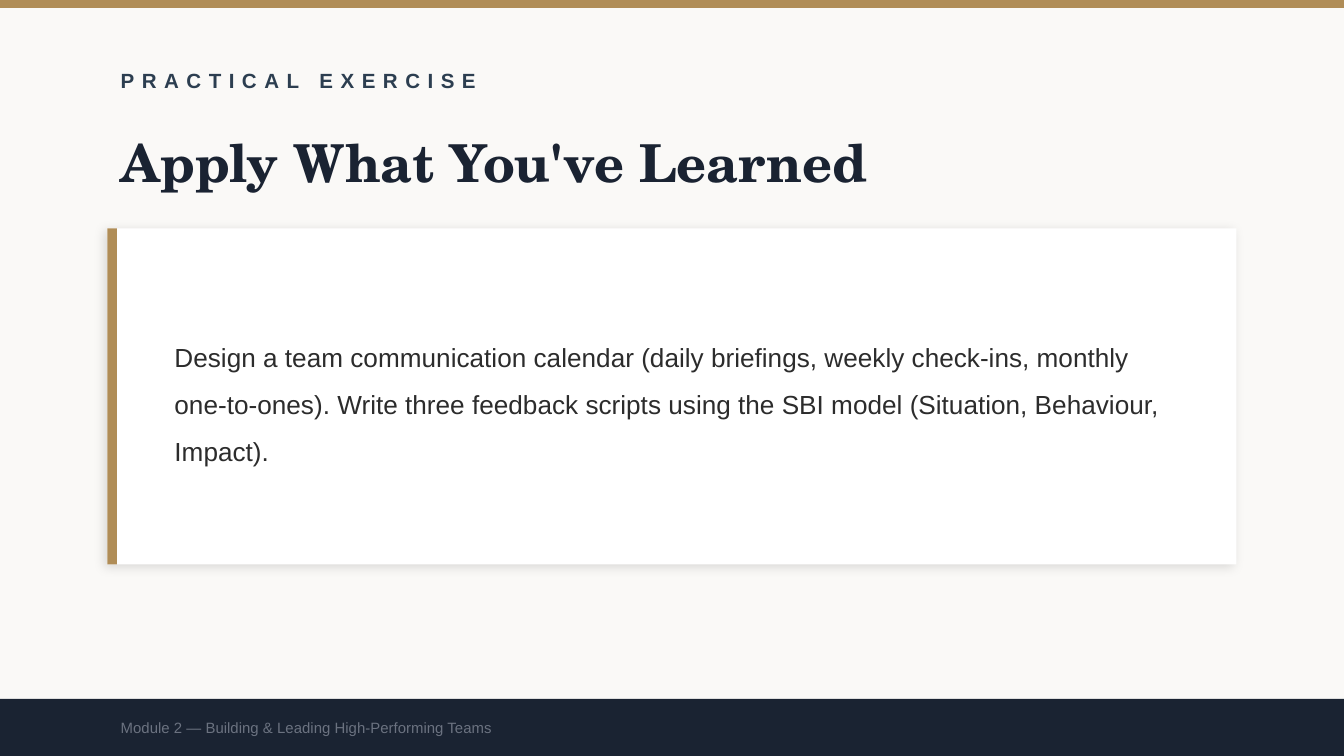
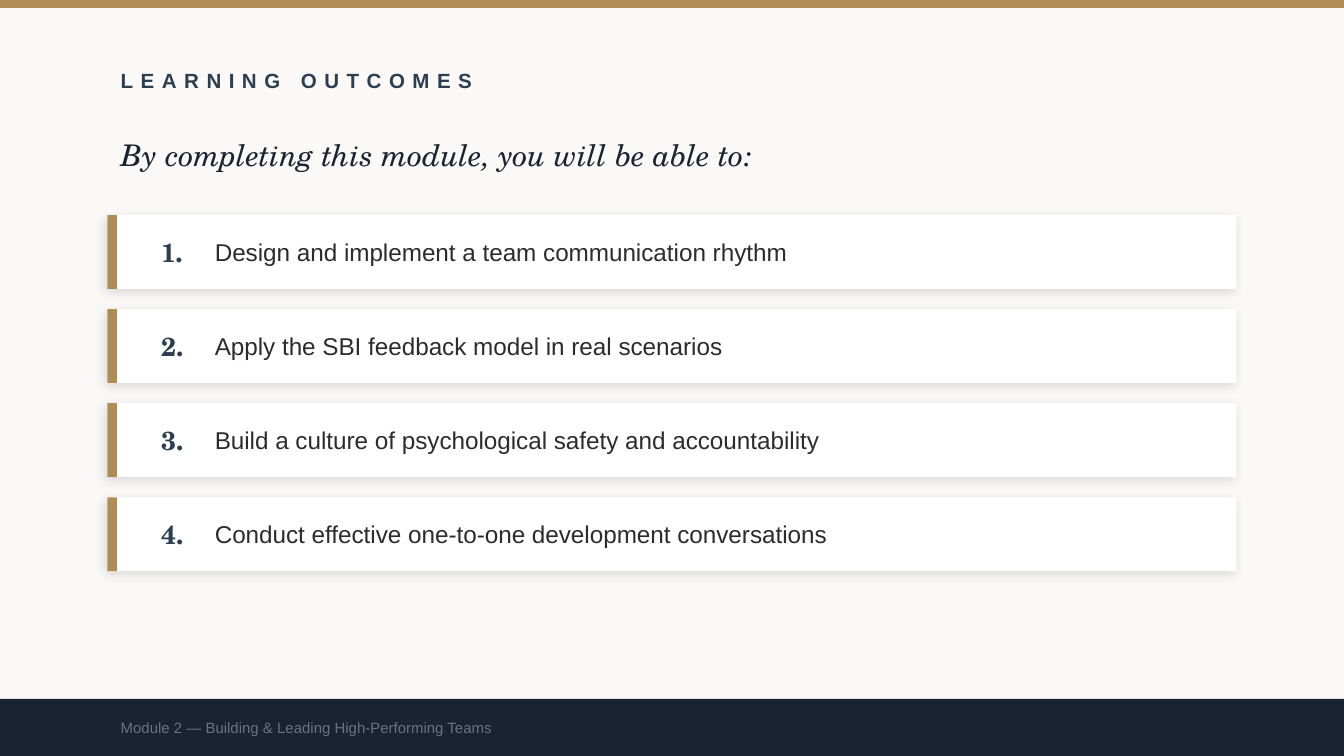
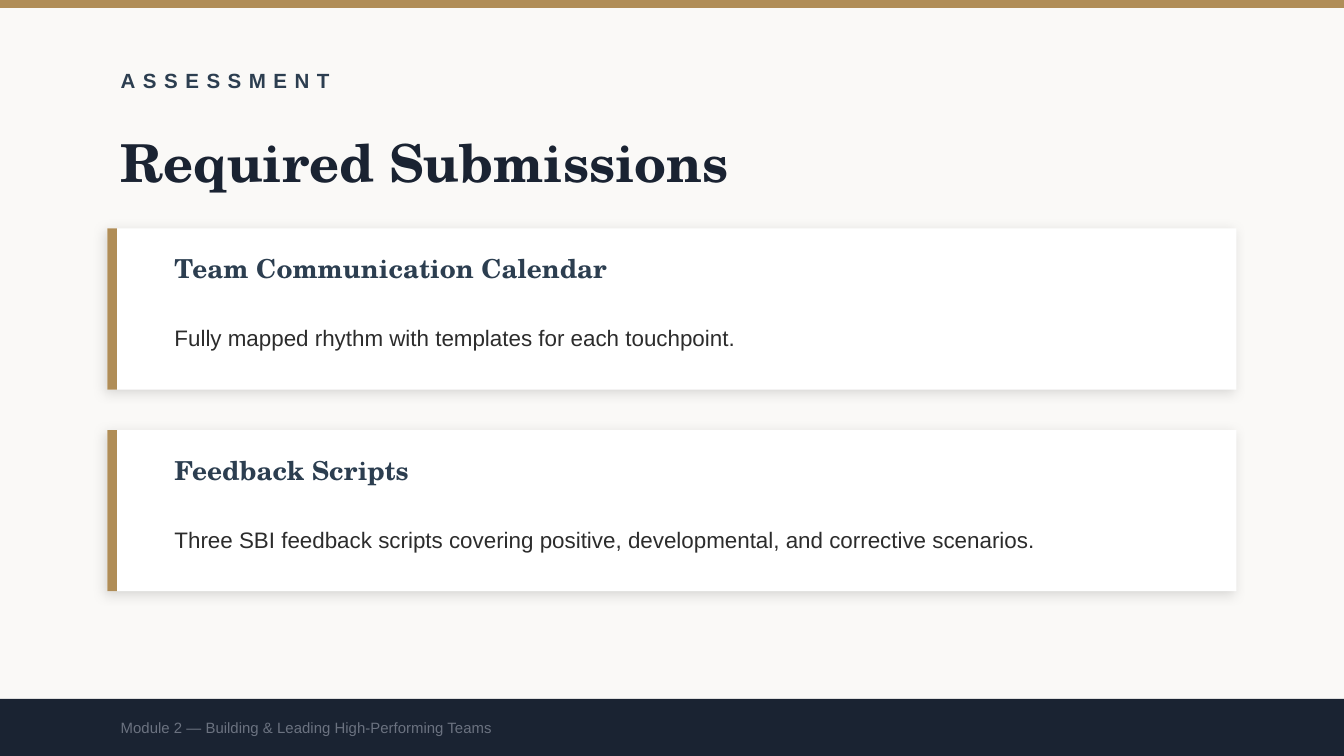
from lxml import etree
from pptx import Presentation, util as u
from pptx.dml.color import RGBColor
from pptx.enum import shapes, text
from pptx.oxml import ns

# Content
FOOTER = "Module 2 — Building & Leading High-Performing Teams"
EXERCISE = {
    "label": "PRACTICAL EXERCISE",
    "title": "Apply What You've Learned",
    "task": "Design a team communication calendar (daily briefings, weekly check-ins, "
            "monthly one-to-ones). Write three feedback scripts using the SBI model "
            "(Situation, Behaviour, Impact).",
}
OUTCOMES = {
    "label": "LEARNING OUTCOMES",
    "lead": "By completing this module, you will be able to:",
    "items": [
        "Design and implement a team communication rhythm",
        "Apply the SBI feedback model in real scenarios",
        "Build a culture of psychological safety and accountability",
        "Conduct effective one-to-one development conversations",
    ],
}
ASSESSMENT = {
    "label": "ASSESSMENT",
    "title": "Required Submissions",
    "items": [
        ("Team Communication Calendar",
         "Fully mapped rhythm with templates for each touchpoint."),
        ("Feedback Scripts",
         "Three SBI feedback scripts covering positive, developmental, "
         "and corrective scenarios."),
    ],
}

# Shared look
COLORS = {"paper": "FAF9F7", "gold": "B08D57", "navy": "1A2332", "slate": "2C3E50",
          "ink": "2C2C2C", "gray": "6B7280", "white": "FFFFFF", "shadow": "000000"}
SERIF, SANS = "TeX Gyre Schola", "Arial"
STYLES = {  # font, size, colour, bold, italic
    "label": (SANS, 11, "slate", True, False),
    "title": (SERIF, 28, "navy", True, False),
    "lead": (SERIF, 16, "navy", False, True),
    "heading": (SERIF, 14, "slate", True, False),
    "task": (SANS, 14, "ink", False, False),
    "item": (SANS, 13, "ink", False, False),
    "detail": (SANS, 12, "ink", False, False),
    "footer": (SANS, 8, "gray", False, False),
}

# Layout in inches
W, H = 10, 10 * 9 / 16
MARGIN = 0.8
CARD_W = W - 2 * MARGIN
HEAD_W = 8
BODY_X, BODY_W = 1.2, 7.7
FOOT_Y, FOOT_H = 5.2, 0.42


def rgb(name):
    return RGBColor.from_string(COLORS[name])


def add_rect(s, x, y, w, h, color):
    sp = s.shapes.add_shape(shapes.MSO_SHAPE.RECTANGLE, *map(u.Inches, (x, y, w, h)))
    sp.shadow.inherit = False
    sp.fill.solid()
    sp.fill.fore_color.rgb = rgb(color)
    sp.line.fill.background()
    return sp


def add_text(s, x, y, w, h, words, style, line_spacing=None, tracking=None):
    tf = s.shapes.add_textbox(*map(u.Inches, (x, y, w, h))).text_frame
    tf.word_wrap = True
    tf.vertical_anchor = text.MSO_ANCHOR.MIDDLE
    p = tf.paragraphs[0]
    r = p.add_run()
    r.text = words
    name, size, color, bold, italic = STYLES[style]
    font = p.font
    font.name, font.size, font.bold, font.italic = name, u.Pt(size), bold, italic
    font.color.rgb = rgb(color)
    if line_spacing:
        p.line_spacing = line_spacing
    if tracking:
        r.font._element.set("spc", str(tracking * 100))


def add_soft_shadow(sp, blur=6, distance=2, angle=135, opacity=12):
    effects = sp._element.spPr.find(ns.qn("a:effectLst"))
    shadow = etree.SubElement(effects, ns.qn("a:outerShdw"), blurRad=str(u.Pt(blur)),
                              dist=str(u.Pt(distance)), dir=str(angle * 60000),
                              algn="bl", rotWithShape="0")
    color = etree.SubElement(shadow, ns.qn("a:srgbClr"), val=COLORS["shadow"])
    etree.SubElement(color, ns.qn("a:alpha"), val=str(opacity * 1000))


def add_card(s, y, h):
    add_soft_shadow(add_rect(s, MARGIN, y, CARD_W, h, "white"))
    add_rect(s, MARGIN, y, 0.07, h, "gold")


def add_slide(prs, label):
    s = prs.slides.add_slide(prs.slide_layouts[6])
    s.background.fill.solid()
    s.background.fill.fore_color.rgb = rgb("paper")
    add_rect(s, 0, 0, W, 0.06, "gold")
    add_text(s, MARGIN, 0.4, HEAD_W, 0.4, label, "label", tracking=4)
    add_rect(s, 0, FOOT_Y, W, H - FOOT_Y, "navy")
    add_text(s, MARGIN, FOOT_Y, HEAD_W, FOOT_H, FOOTER, "footer")
    return s


def add_title(s, words):
    add_text(s, MARGIN, 0.9, HEAD_W, 0.6, words, "title")


def build_exercise(prs):
    s = add_slide(prs, EXERCISE["label"])
    add_title(s, EXERCISE["title"])
    top, height, pad = 1.7, 2.5, 0.2
    add_card(s, top, height)
    add_text(s, BODY_X, top + pad, BODY_W, height - 2 * pad, EXERCISE["task"], "task", 1.5)


def build_outcomes(prs):
    s = add_slide(prs, OUTCOMES["label"])
    add_text(s, MARGIN, 0.9, HEAD_W, 0.5, OUTCOMES["lead"], "lead")
    top, pitch, height = 1.6, 0.7, 0.55
    for i, item in enumerate(OUTCOMES["items"]):
        y = top + i * pitch
        add_card(s, y, height)
        add_text(s, 1.1, y, 0.4, height, f"{i + 1}.", "heading")
        add_text(s, 1.5, y, 7.4, height, item, "item")


def build_assessment(prs):
    s = add_slide(prs, ASSESSMENT["label"])
    add_title(s, ASSESSMENT["title"])
    top, pitch, height = 1.7, 1.5, 1.2
    for i, (heading, detail) in enumerate(ASSESSMENT["items"]):
        y = top + i * pitch
        add_card(s, y, height)
        add_text(s, BODY_X, y + 0.12, BODY_W, 0.35, heading, "heading")
        add_text(s, BODY_X, y + 0.5, BODY_W, 0.55, detail, "detail", 1.4)


def main():
    prs = Presentation()
    prs.slide_width, prs.slide_height = u.Inches(W), u.Inches(H)
    for build in (build_exercise, build_outcomes, build_assessment):
        build(prs)
    prs.save("out.pptx")


if __name__ == "__main__":
    main()
